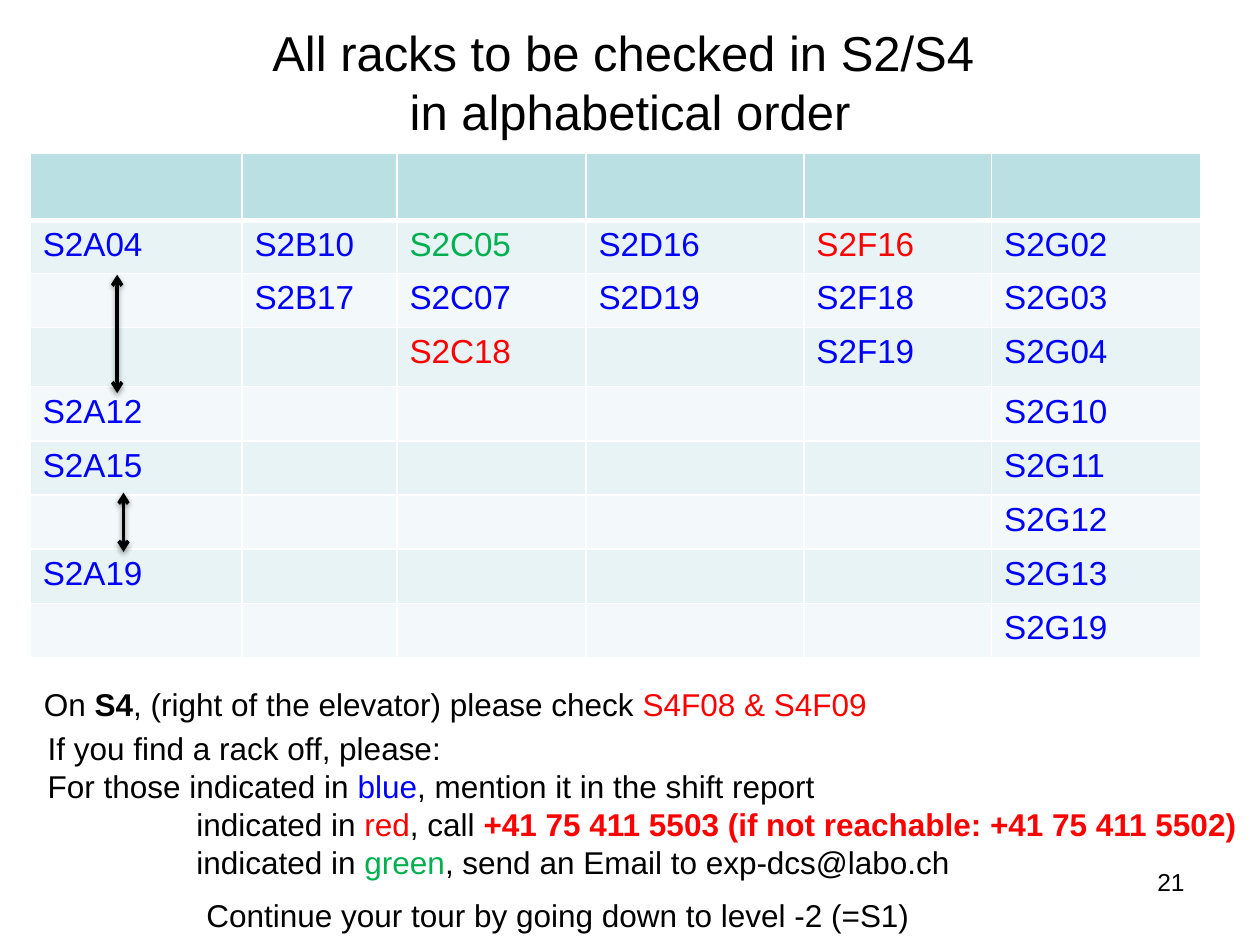
from lxml import etree
from pptx import Presentation
from pptx.dml.color import RGBColor
from pptx.enum import shapes, text
from pptx.oxml import parse_xml
from pptx.oxml.ns import nsdecls, qn
from pptx.util import Inches, Pt

BLACK, WHITE = "000000", "FFFFFF"
BLUE, RED, GREEN = "0000FF", "FF0000", "00B050"
HEADER_FILL, BAND_FILLS = "BBE0E3", ("E7F3F4", "F3F9FA")
BREAK = "\v"

TABLE_LEFT, TABLE_TOP = 0.24, 1.22
COLUMN_WIDTHS = (1.68, 1.23, 1.5, 1.73, 1.49, 1.66)
ROW_HEIGHTS = (0.53, 0.42, 0.43, 0.47) + (0.43,) * 5
RACK_COLUMNS = (
    ("S2A04", "", "", "S2A12", "S2A15", "", "S2A19"),
    ("S2B10", "S2B17"),
    ("S2C05", "S2C07", "S2C18"),
    ("S2D16", "S2D19"),
    ("S2F16", "S2F18", "S2F19"),
    ("S2G02", "S2G03", "S2G04", "S2G10", "S2G11", "S2G12", "S2G13", "S2G19"),
)
RACK_COLOURS = {"S2C05": GREEN, "S2C18": RED, "S2F16": RED}


def colour(value):
    return RGBColor.from_string(value)


def write(frame, lines, size=18, ink=BLACK, align=text.PP_ALIGN.LEFT):
    """Fill a frame; a line is a list of strings or (string, colour, bold)."""
    for number, line in enumerate(lines):
        para = frame.paragraphs[0] if number == 0 else frame.add_paragraph()
        para.alignment = align
        for part in line:
            if part == BREAK:
                para.add_line_break()
                continue
            words, shade, bold = (part, ink, False) if isinstance(part, str) else part
            span = para.add_run()
            span.text = words
            span.font.name = "Arial"
            span.font.size = Pt(size)
            span.font.bold = bold
            span.font.color.rgb = colour(shade)


def add_text(page, left, top, width, height, lines, **style):
    box = page.shapes.add_textbox(Inches(left), Inches(top), Inches(width), Inches(height))
    box.text_frame.word_wrap = True
    write(box.text_frame, lines, **style)
    return box


def add_title(page):
    title = page.shapes.title
    title.left, title.top = Inches(0.5), Inches(0.02)
    title.width, title.height = Inches(9), Inches(1.25)
    title.text_frame.vertical_anchor = text.MSO_ANCHOR.MIDDLE
    write(title.text_frame,
          [["All racks to be checked in S2/S4 ", BREAK, "in alphabetical order"]],
          size=28, align=text.PP_ALIGN.CENTER)


def set_borders(cell, bottom):
    properties = cell._tc.get_or_add_tcPr()
    widths = {"lnL": 1, "lnR": 1, "lnT": 1, "lnB": bottom}
    for position, (side, width) in enumerate(widths.items()):
        properties.insert(position, parse_xml(
            f'<a:{side} {nsdecls("a")} w="{Pt(width)}"><a:solidFill>'
            f'<a:srgbClr val="{WHITE}"/></a:solidFill></a:{side}>'))


def add_rack_table(page):
    table = page.shapes.add_table(
        len(ROW_HEIGHTS), len(COLUMN_WIDTHS), Inches(TABLE_LEFT), Inches(TABLE_TOP),
        Inches(sum(COLUMN_WIDTHS)), Inches(sum(ROW_HEIGHTS))).table
    for row, height in zip(table.rows, ROW_HEIGHTS):
        row.height = Inches(height)
    for index, (width, racks) in enumerate(zip(COLUMN_WIDTHS, RACK_COLUMNS)):
        table.columns[index].width = Inches(width)
        for row in range(len(ROW_HEIGHTS)):
            cell = table.cell(row, index)
            cell.fill.solid()
            cell.fill.fore_color.rgb = colour(BAND_FILLS[(row - 1) % 2] if row else HEADER_FILL)
            set_borders(cell, bottom=1 if row else 3)
            rack = racks[row - 1] if 0 < row <= len(racks) else ""
            if rack:
                write(cell.text_frame, [[rack]], size=19, ink=RACK_COLOURS.get(rack, BLUE))


def add_range_arrow(page, x, top, bottom):
    """Double-headed vertical arrow with a soft shadow, for a range of racks."""
    arrow = page.shapes.add_connector(
        shapes.MSO_CONNECTOR.STRAIGHT, Inches(x), Inches(top), Inches(x), Inches(bottom))
    arrow.line.color.rgb = colour(BLACK)
    arrow.line.width = Pt(2)
    line = arrow.line._get_or_add_ln()
    for end in ("a:headEnd", "a:tailEnd"):
        etree.SubElement(line, qn(end), type="arrow")
    arrow._element.spPr.append(parse_xml(
        f'<a:effectLst {nsdecls("a")}><a:outerShdw blurRad="{Pt(3.1)}" dist="{Pt(1.6)}" '
        f'dir="5400000" rotWithShape="0"><a:srgbClr val="{BLACK}"><a:alpha val="38000"/>'
        '</a:srgbClr></a:outerShdw></a:effectLst>'))


def add_instructions(page):
    box = add_text(page, 0.28, 5.74, 9.72, 1.31, [
        ["If you find a rack off, please:"],
        ["For those indicated in ", ("blue", BLUE, False), ", mention it in the shift report"],
        ["indicated in ", ("red", RED, False), ", call ",
         ("+41 75 411 5503 (if not reachable: +41 75 411 5502)", RED, True)],
        ["indicated in ", ("green", GREEN, False), ", send an Email to exp-dcs@labo.ch"],
    ])
    for para in box.text_frame.paragraphs[2:]:
        para._p.get_or_add_pPr().set("marL", str(Inches(1.18)))


def main():
    deck = Presentation()
    deck.slide_width, deck.slide_height = Inches(10), Inches(7.5)
    page = deck.slides.add_slide(deck.slide_layouts[5])
    add_title(page)
    add_text(page, 7.17, 6.83, 2.33, 0.52, [["21"]], size=14, align=text.PP_ALIGN.RIGHT)
    add_instructions(page)
    add_text(page, 1.54, 7.06, 5.9, 0.4,
             [["Continue your tour by going down to level -2 (=S1)"]])
    add_rack_table(page)
    add_range_arrow(page, 0.93, 2.18, 3.12)
    add_text(page, 0.25, 5.39, 6.86, 0.4,
             [["On ", ("S4", BLACK, True), ", (right of the elevator) please check ",
               ("S4F08 & S4F09", RED, False)]])
    add_range_arrow(page, 0.98, 3.91, 4.38)
    deck.save("out.pptx")


if __name__ == "__main__":
    main()
